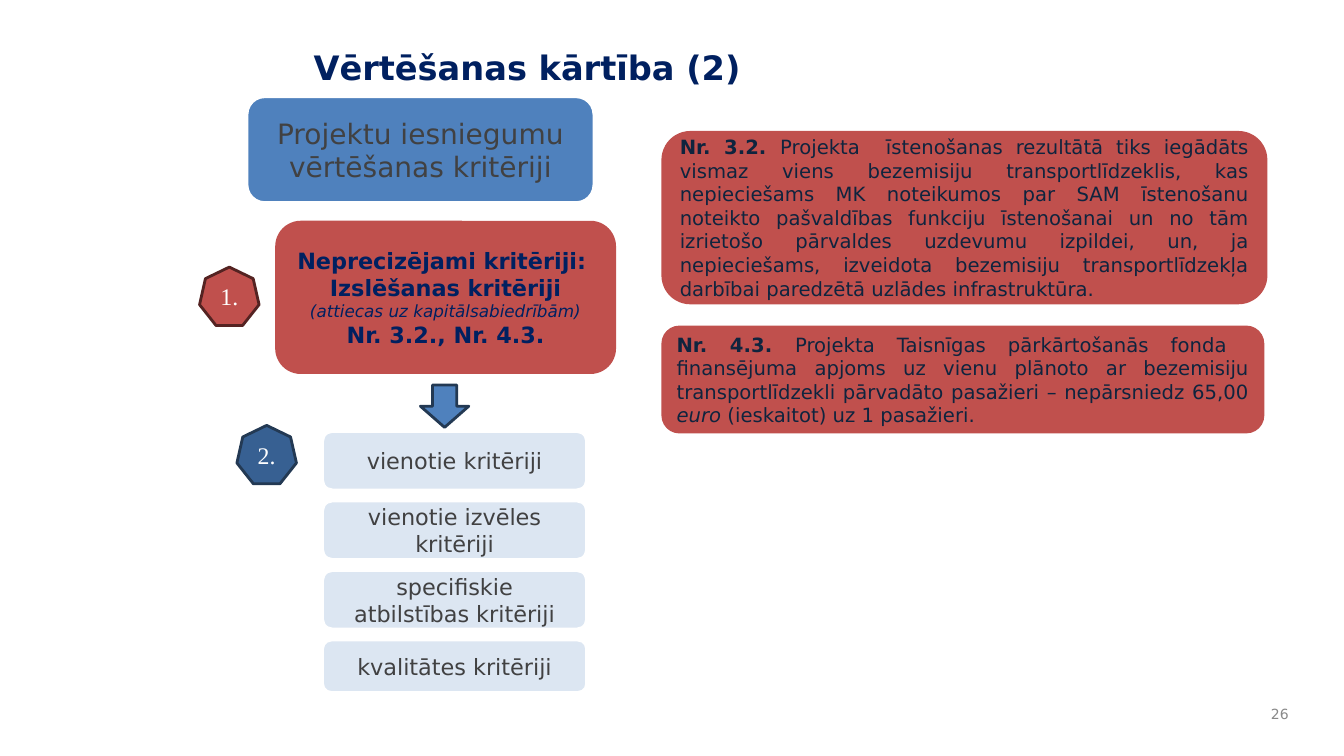
from dataclasses import dataclass

from pptx import Presentation
from pptx.dml.color import RGBColor
from pptx.enum.shapes import MSO_SHAPE
from pptx.enum.text import MSO_ANCHOR, PP_ALIGN
from pptx.util import Inches, Pt


@dataclass(frozen=True)
class Theme:
    font: str = "DejaVu Sans"
    number_font: str = "Times New Roman"
    navy: str = "002060"
    dark_navy: str = "0F243E"
    grey: str = "414142"
    pale_grey: str = "898989"
    white: str = "FFFFFF"
    blue: str = "4F81BD"
    deep_blue: str = "376092"
    blue_edge: str = "233953"
    pale_blue: str = "DCE6F2"
    red: str = "C0504D"
    red_edge: str = "542322"
    title_size: int = 24
    heading_size: int = 20
    marker_size: int = 17
    body_size: int = 16
    detail_size: int = 14
    note_size: int = 12
    page_size: int = 10


theme = Theme()
presentation = Presentation()
presentation.slide_width = Inches(13.33)
presentation.slide_height = Inches(7.5)
slide = presentation.slides.add_slide(presentation.slide_layouts[5])

# The slide is a grid of 100 columns by 100 rows.
column = presentation.slide_width / 100
row = presentation.slide_height / 100


def write(shape, *paragraphs, align=PP_ALIGN.CENTER, anchor=MSO_ANCHOR.MIDDLE, **defaults):
    """Fill a shape; each paragraph is a list of (text, format changes) runs."""
    frame = shape.text_frame
    frame.word_wrap = True
    frame.vertical_anchor = anchor
    for index, runs in enumerate(paragraphs):
        paragraph = frame.add_paragraph() if index else frame.paragraphs[0]
        paragraph.alignment = align
        for text, changes in runs:
            style = {"font": theme.font, "bold": False, "italic": False} | defaults | changes
            run = paragraph.add_run()
            run.text = text
            run.font.name = style["font"]
            run.font.size = Pt(style["size"])
            run.font.bold = style["bold"]
            run.font.italic = style["italic"]
            run.font.color.rgb = RGBColor.from_string(style["color"])


def add_block(kind, left, top, width, height, fill, edge=None):
    """Add a flat preset shape, placed in grid columns and rows."""
    shape = slide.shapes.add_shape(
        kind, int(left * column), int(top * row), int(width * column), int(height * row))
    shape.shadow.inherit = False
    shape.fill.solid()
    shape.fill.fore_color.rgb = RGBColor.from_string(fill)
    if edge:
        shape.line.color.rgb = RGBColor.from_string(edge)
        shape.line.width = Pt(2)
    else:
        shape.line.fill.background()
    return shape


# Title and page number
title = slide.shapes.title
title.left, title.top = int(22.58 * column), int(5.6 * row)
title.width, title.height = int(72.39 * column), int(15.07 * row)
write(title, [("Vērtēšanas kārtība (2)", {})], align=PP_ALIGN.LEFT, anchor=MSO_ANCHOR.TOP,
      size=theme.title_size, color=theme.navy, bold=True)

page_number = slide.shapes.add_textbox(
    int(93.32 * column), int(92.27 * row), int(3.3 * column), int(4.4 * row))
write(page_number, [("26", {})], align=PP_ALIGN.RIGHT,
      size=theme.page_size, color=theme.pale_grey)

# Criteria overview
heading = add_block(MSO_SHAPE.ROUNDED_RECTANGLE, 18.38, 12.8, 25.81, 14, theme.blue, theme.white)
write(heading, [("Projektu iesniegumu vērtēšanas kritēriji", {})],
      size=theme.heading_size, color=theme.grey)

exclusion = add_block(MSO_SHAPE.ROUNDED_RECTANGLE, 20.48, 29.2, 25.36, 20.27, theme.red)
write(exclusion,
      [("Neprecizējami kritēriji: ", {})],
      [("Izslēšanas kritēriji", {})],
      [("(attiecas uz kapitālsabiedrībām)",
        {"size": theme.note_size, "bold": False, "italic": True})],
      [("Nr. 3.2., Nr. 4.3.", {})],
      size=theme.body_size, color=theme.navy, bold=True)

add_block(MSO_SHAPE.DOWN_ARROW, 31.28, 50.93, 3.6, 5.6, theme.blue, theme.blue_edge)

# Second stage: equal steps, the last one slightly lower
criteria = [
    ("vienotie kritēriji", 7.73),
    ("vienotie izvēles kritēriji", 7.73),
    ("specifiskie atbilstības kritēriji", 7.73),
    ("kvalitātes kritēriji", 6.93),
]
for index, (label, height) in enumerate(criteria):
    criterion = add_block(MSO_SHAPE.ROUNDED_RECTANGLE, 24, 57.07 + 9.2 * index, 19.65, height,
                          theme.pale_blue, theme.white)
    write(criterion, [(label, {})], size=theme.body_size, color=theme.grey)

# Stage markers
markers = [
    ("1.", 14.85, 35.33, theme.red, theme.red_edge),
    ("2.", 17.63, 56.27, theme.deep_blue, theme.blue_edge),
]
for label, left, top, fill, edge in markers:
    marker = add_block(MSO_SHAPE.HEPTAGON, left, top, 4.43, 7.73, fill, edge)
    write(marker, [(label, {})], font=theme.number_font,
          size=theme.marker_size, color=theme.white)

# Explanations of the exclusion criteria
explanations = [
    (17.33, 45.09, 22.93, [
        ("Nr. 3.2. ", {"bold": True}),
        ("Projekta  īstenošanas rezultātā tiks iegādāts vismaz viens bezemisiju "
         "transportlīdzeklis, kas nepieciešams MK noteikumos par SAM īstenošanu noteikto "
         "pašvaldības funkciju īstenošanai un no tām izrietošo pārvaldes uzdevumu izpildei, "
         "un, ja nepieciešams, izveidota bezemisiju transportlīdzekļa darbībai paredzētā "
         "uzlādes infrastruktūra.", {}),
    ]),
    (43.07, 44.86, 14.27, [
        ("Nr. 4.3. ", {"bold": True}),
        ("Projekta Taisnīgas pārkārtošanās fonda  finansējuma apjoms uz vienu plānoto ar "
         "bezemisiju transportlīdzekli pārvadāto pasažieri – nepārsniedz 65,00 ", {}),
        ("euro ", {"italic": True}),
        ("(ieskaitot) uz 1 pasažieri.", {}),
    ]),
]
for top, width, height, runs in explanations:
    explanation = add_block(MSO_SHAPE.ROUNDED_RECTANGLE, 49.21, top, width, height, theme.red)
    write(explanation, runs, align=PP_ALIGN.JUSTIFY,
          size=theme.detail_size, color=theme.dark_navy)

presentation.save("out.pptx")
